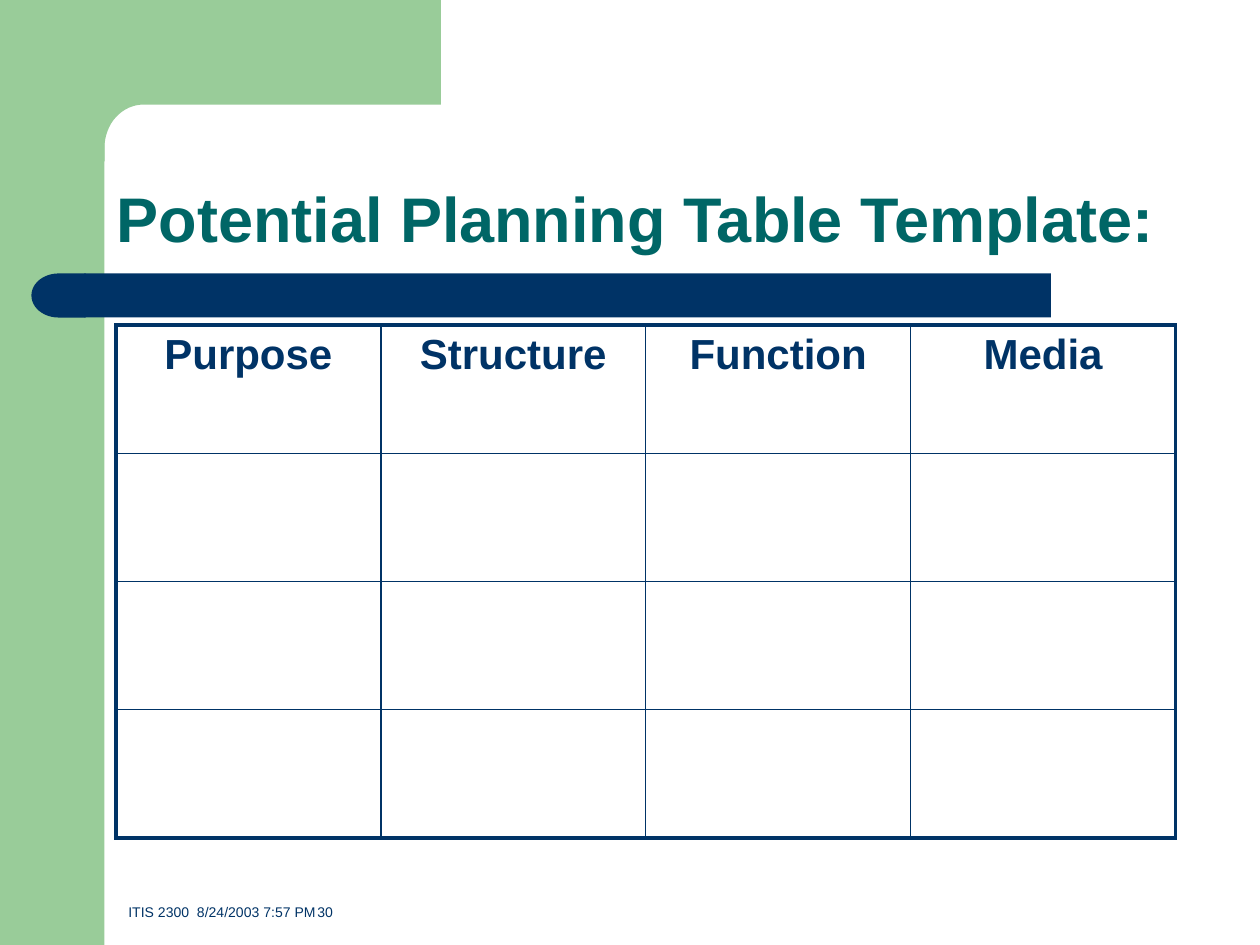
import math
from dataclasses import dataclass

from lxml import etree
from pptx import Presentation
from pptx import util as u
from pptx.dml.color import RGBColor
from pptx.enum import shapes, text
from pptx.oxml.ns import qn


@dataclass(frozen=True)
class Theme:
    font: str = "Arial"
    green: str = "99CC99"
    navy: str = "003366"
    teal: str = "006666"
    title: float = 36
    header: float = 24
    footer: float = 8
    outer: float = 2.25
    inner: float = 1


@dataclass(frozen=True)
class Block:
    kind: shapes.MSO_SHAPE
    left: float
    top: float
    width: float
    height: float
    color: str
    flip: bool = False


T = Theme()
HEADERS = ("Purpose", "Structure", "Function", "Media")
ROWS = 4
PANEL = Block(shapes.MSO_SHAPE.RECTANGLE, 0, 0, 0.83, 7.5, T.green)
BAR = (
    Block(shapes.MSO_SHAPE.RECTANGLE, 0.67, 2.17, 7.67, 0.35, T.navy),
    Block(shapes.MSO_SHAPE.FLOWCHART_DELAY, 0.25, 2.17, 0.43, 0.35, T.navy, True),
)


def paint(sp, color: str) -> None:
    sp.shadow.inherit = False
    sp.fill.solid()
    sp.fill.fore_color.rgb = RGBColor.from_string(color)
    sp.line.fill.background()


def add_block(s, b: Block) -> None:
    sp = s.shapes.add_shape(b.kind, *map(u.Inches, (b.left, b.top, b.width, b.height)))
    paint(sp, b.color)
    if b.flip:
        sp._element.spPr.get_or_add_xfrm().set("flipH", "1")


def add_corner(s, steps: int = 16) -> None:
    cx, cy, rx, ry = 1.14, 1.17, 0.31, 0.34
    angles = [math.pi / 2 * i / steps for i in range(steps + 1)]
    arc = [(cx - rx * math.sin(a), cy - ry * math.cos(a)) for a in angles]
    outline = [(3.5, 0.83), *arc, (0.83, 1.28), (0.5, 1.28), (0.5, 0)]
    fb = s.shapes.build_freeform(u.Inches(3.5), 0)
    fb.add_line_segments([(u.Inches(x), u.Inches(y)) for x, y in outline])
    paint(fb.convert_to_shape(), T.green)


def add_run(p, words: str, size: float, color: str, bold: bool = False) -> None:
    r = p.add_run()
    r.text = words
    r.font.name = T.font
    r.font.size = u.Pt(size)
    r.font.bold = bold
    r.font.color.rgb = RGBColor.from_string(color)


def add_text(s, left: float, top: float, width: float, height: float):
    tf = s.shapes.add_textbox(*map(u.Inches, (left, top, width, height))).text_frame
    tf.word_wrap = True
    tf.vertical_anchor = text.MSO_ANCHOR.BOTTOM
    return tf.paragraphs[0]


def set_border(cell, side: str, width: float) -> None:
    tc_pr = cell._tc.get_or_add_tcPr()
    ln = etree.SubElement(tc_pr, qn(f"a:ln{side}"), w=str(u.Pt(width)))
    fill = etree.SubElement(ln, qn("a:solidFill"))
    etree.SubElement(fill, qn("a:srgbClr"), val=T.navy)


def add_planning_table(s) -> None:
    cols = len(HEADERS)
    box = map(u.Inches, (0.92, 2.58, 8.41, 4.07))
    table = s.shapes.add_table(ROWS, cols, *box).table
    table.first_row = table.horz_banding = False
    for i in range(ROWS):
        for j in range(cols):
            cell = table.cell(i, j)
            edges = {"L": j == 0, "R": j == cols - 1, "T": i == 0, "B": i == ROWS - 1}
            for side, is_outer in edges.items():
                set_border(cell, side, T.outer if is_outer else T.inner)
            cell.fill.background()
    for j, name in enumerate(HEADERS):
        p = table.cell(0, j).text_frame.paragraphs[0]
        p.alignment = text.PP_ALIGN.CENTER
        p.space_before = u.Pt(T.header * 0.2)
        add_run(p, name, T.header, T.navy, True)


def main() -> None:
    """Build the planning table slide and save it."""
    prs = Presentation()
    prs.slide_width, prs.slide_height = u.Inches(10), u.Inches(7.5)
    s = prs.slides.add_slide(prs.slide_layouts[6])
    add_block(s, PANEL)
    add_corner(s)
    for b in BAR:
        add_block(s, b)
    p = add_text(s, 0.92, 6.83, 8.59, 0.52)
    add_run(p, "ITIS 2300  8/24/2003 7:57 PM\t30", T.footer, T.navy)
    p = add_text(s, 0.83, 0.83, 8.67, 1.25)
    p.line_spacing = 0.9
    add_run(p, "Potential Planning Table Template:", T.title, T.teal, True)
    add_planning_table(s)
    prs.save("out.pptx")


if __name__ == "__main__":
    main()
